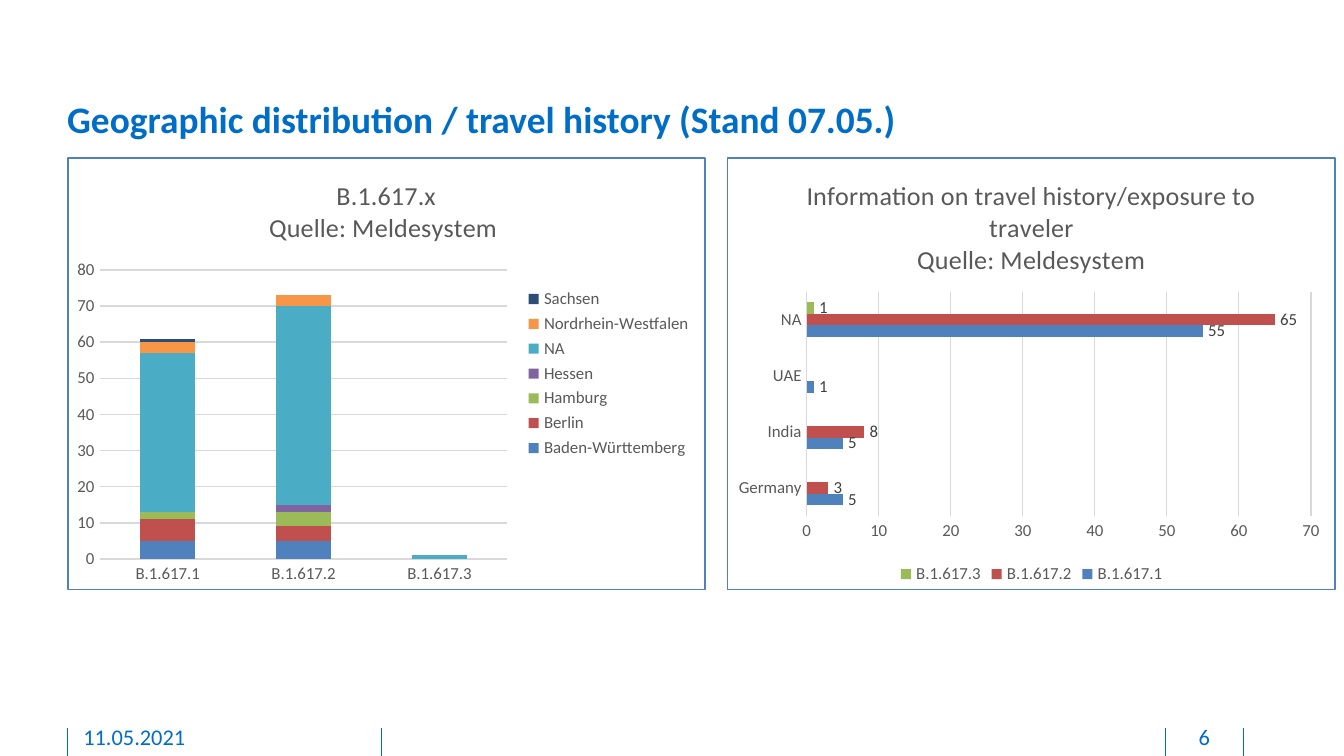
import pptx
import pptx.chart.data
import pptx.dml.color
import pptx.enum.chart
import pptx.enum.shapes
import pptx.enum.text
import pptx.oxml
import pptx.util
from pptx.util import Inches, Pt

COLORS = {
    "accent": "006EC7", "text": "595959", "label": "404040",
    "grid": "D9D9D9", "border": "4F81BD",
    "blue": "4F81BD", "red": "C0504D", "green": "9BBB59", "purple": "8064A2",
    "teal": "4BACC6", "orange": "F79646", "navy": "2C4D75",
}
FONT = "Calibri"
SLIDE_W = 10
SLIDE_H = SLIDE_W * 9 / 16
XL = pptx.enum.chart
ALIGN = pptx.enum.text.PP_ALIGN

# Content
TITLE = "Geographic distribution / travel history (Stand 07.05.)"
FOOTER = [  # text, left, width, alignment
    ("11.05.2021", 0.62, 2.03, ALIGN.LEFT),
    ("6", 8.69, 0.54, ALIGN.CENTER),
]
FOOTER_LINES = [0.5, 2.84, 8.67, 9.25]
CHARTS = [
    {
        "title": ["B.1.617.x", "Quelle: Meldesystem "],
        "type": XL.XL_CHART_TYPE.COLUMN_STACKED,
        "left": 0.5, "width": 4.75, "plot": (0.05, 0.26, 0.64, 0.67),
        "legend": XL.XL_LEGEND_POSITION.RIGHT,
        "gap": 150, "overlap": 100, "maximum": 80, "labels": False,
        "categories": ["B.1.617.1", "B.1.617.2", "B.1.617.3"],
        "series": [
            ("Baden-Württemberg", (5, 5, None), "blue"),
            ("Berlin", (6, 4, None), "red"),
            ("Hamburg", (2, 4, None), "green"),
            ("Hessen", (None, 2, None), "purple"),
            ("NA", (44, 55, 1), "teal"),
            ("Nordrhein-Westfalen", (3, 3, None), "orange"),
            ("Sachsen", (1, None, None), "navy"),
        ],
    },
    {
        "title": ["Information on travel history/exposure to traveler",
                  "Quelle: Meldesystem"],
        "type": XL.XL_CHART_TYPE.BAR_CLUSTERED,
        "left": 5.41, "width": 4.53, "plot": (0.13, 0.31, 0.83, 0.52),
        "legend": XL.XL_LEGEND_POSITION.BOTTOM,
        "gap": 182, "overlap": 0, "maximum": 70, "labels": True,
        "categories": ["Germany", "India", "UAE", "NA"],
        "series": [
            ("B.1.617.1", (5, 5, 1, 55), "blue"),
            ("B.1.617.2", (3, 8, None, 65), "red"),
            ("B.1.617.3", (None, None, None, 1), "green"),
        ],
    },
]


def rgb(name):
    return pptx.dml.color.RGBColor.from_string(COLORS[name])


def style(font, size, color, bold=False):
    font.name, font.size, font.bold = FONT, Pt(size), bold
    font.color.rgb = rgb(color)


def set_line(line, color, width=0.75):
    line.color.rgb = rgb(color)
    line.width = Pt(width)


def set_margins(frame, bottom=0):
    frame.margin_left = frame.margin_top = frame.margin_right = 0
    frame.margin_bottom = Inches(bottom)
    frame.vertical_anchor = pptx.enum.text.MSO_ANCHOR.TOP


def add_border(chart):
    border = pptx.oxml.parse_xml(
        '<c:spPr xmlns:c="http://schemas.openxmlformats.org/drawingml/2006/chart" '
        'xmlns:a="http://schemas.openxmlformats.org/drawingml/2006/main">'
        f'<a:noFill/><a:ln w="{Pt(0.75)}"><a:solidFill>'
        f'<a:srgbClr val="{COLORS["border"]}"/></a:solidFill></a:ln></c:spPr>')
    chart.element.find("{*}txPr").addprevious(border)


def place_plot(chart, box):
    plot_area = chart.element.find(".//{*}plotArea")
    for old in plot_area.findall("{*}layout"):
        plot_area.remove(old)
    sizes = "".join(f'<c:{key} val="{value}"/>' for key, value in zip("xywh", box))
    plot_area.insert(0, pptx.oxml.parse_xml(
        '<c:layout xmlns:c="http://schemas.openxmlformats.org/drawingml/2006/chart">'
        '<c:manualLayout><c:layoutTarget val="inner"/><c:xMode val="edge"/>'
        f'<c:yMode val="edge"/>{sizes}</c:manualLayout></c:layout>'))


def add_chart(slide, content):
    data = pptx.chart.data.CategoryChartData()
    data.categories = content["categories"]
    for name, values, _ in content["series"]:
        data.add_series(name, values)
    chart = slide.shapes.add_chart(
        content["type"], Inches(content["left"]), Inches(1.17),
        Inches(content["width"]), Inches(3.22), data).chart
    chart.font.name, chart.font.size = FONT, Pt(10)
    add_border(chart)
    place_plot(chart, content["plot"])

    # Heading and legend
    heading = chart.chart_title.text_frame
    heading.text = "\n".join(content["title"])
    for paragraph in heading.paragraphs:
        for run in paragraph.runs:
            style(run.font, 14, "text")
    chart.chart_title.include_in_layout = False
    chart.has_legend = True
    chart.legend.position = content["legend"]
    chart.legend.include_in_layout = False
    style(chart.legend.font, 9, "text")

    # Axes
    for axis in (chart.category_axis, chart.value_axis):
        axis.major_tick_mark = axis.minor_tick_mark = XL.XL_TICK_MARK.NONE
        style(axis.tick_labels.font, 9, "text")
    set_line(chart.category_axis.format.line, "grid")
    values_axis = chart.value_axis
    values_axis.format.line.fill.background()
    set_line(values_axis.major_gridlines.format.line, "grid")
    values_axis.minimum_scale = 0
    values_axis.maximum_scale = content["maximum"]
    values_axis.major_unit = 10

    # Bars
    plot = chart.plots[0]
    plot.vary_by_categories = False
    plot.gap_width, plot.overlap = content["gap"], content["overlap"]
    for series, (_, _, color) in zip(plot.series, content["series"]):
        series.format.fill.solid()
        series.format.fill.fore_color.rgb = rgb(color)
        series.invert_if_negative = False
        if content["labels"]:
            labels = series.data_labels
            labels.show_value = True
            labels.position = XL.XL_LABEL_POSITION.OUTSIDE_END
            style(labels.font, 9, "label")


def main():
    deck = pptx.Presentation()
    deck.slide_width, deck.slide_height = Inches(SLIDE_W), Inches(SLIDE_H)
    slide = deck.slides.add_slide(deck.slide_layouts[5])

    # Footer
    for x in FOOTER_LINES:
        divider = slide.shapes.add_connector(
            pptx.enum.shapes.MSO_CONNECTOR.STRAIGHT,
            Inches(x), Inches(5.42), Inches(x), Inches(SLIDE_H))
        set_line(divider.line, "accent", 0.5)
        divider._element.spPr.append(pptx.oxml.parse_xml(
            '<a:effectLst xmlns:a="http://schemas.openxmlformats.org/drawingml/2006/main"/>'))
    for text, left, width, alignment in FOOTER:
        frame = slide.shapes.add_textbox(
            Inches(left), Inches(5.38), Inches(width), Inches(0.21)).text_frame
        frame.word_wrap = True
        set_margins(frame, 0.05)
        frame.text = text
        frame.paragraphs[0].alignment = alignment
        style(frame.paragraphs[0].runs[0].font, 12, "accent")

    # Title
    title = slide.shapes.title
    title.left, title.top = Inches(0.5), Inches(0.75)
    title.width, title.height = Inches(8.73), Inches(0.31)
    frame = title.text_frame
    set_margins(frame)
    frame.auto_size = pptx.enum.text.MSO_AUTO_SIZE.SHAPE_TO_FIT_TEXT
    frame.text = TITLE
    frame.paragraphs[0].alignment = ALIGN.LEFT
    frame.paragraphs[0].line_spacing = Pt(21.5)
    style(frame.paragraphs[0].runs[0].font, 20, "accent", bold=True)

    # Charts
    for content in CHARTS:
        add_chart(slide, content)

    deck.save("out.pptx")


if __name__ == "__main__":
    main()
